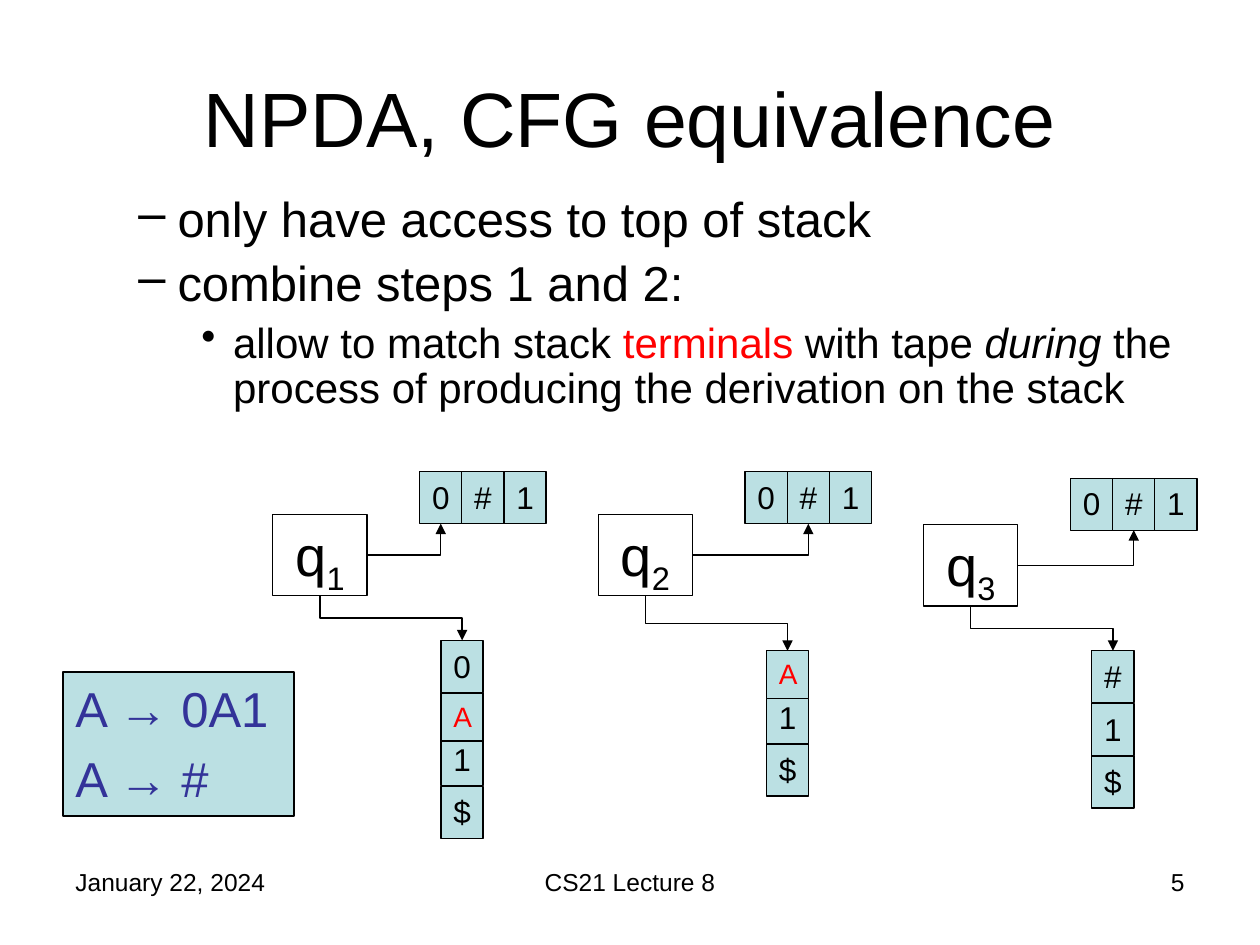
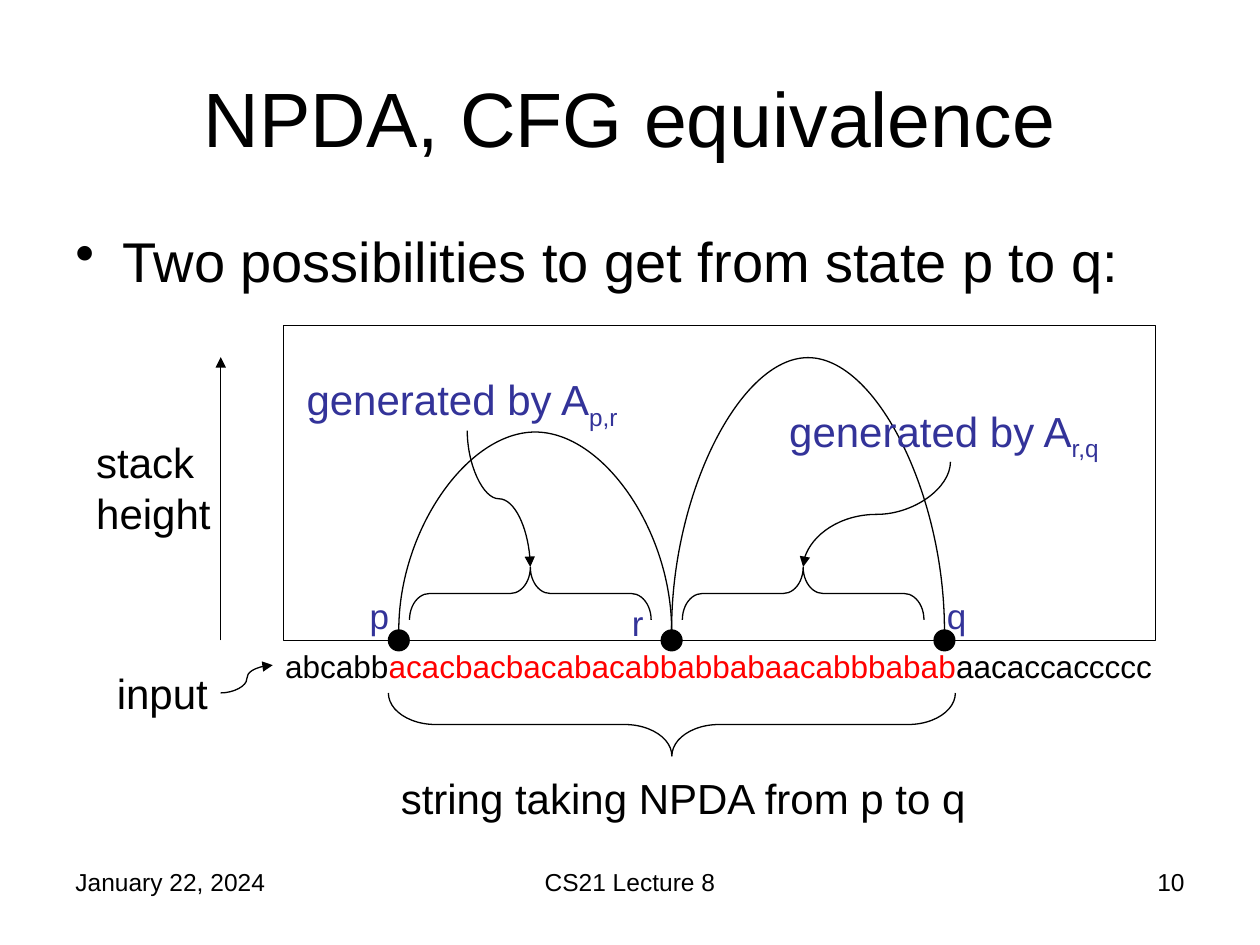
"""Build two lecture slides on the equivalence of NPDAs and CFGs."""
from itertools import accumulate

from lxml.etree import SubElement
from pptx import Presentation
from pptx.dml.color import RGBColor
from pptx.enum.shapes import MSO_CONNECTOR, MSO_SHAPE
from pptx.enum.text import MSO_ANCHOR, PP_ALIGN
from pptx.oxml.ns import qn
from pptx.util import Cm, Pt

BLACK = "000000"
RED = "FF0000"
INDIGO = "333399"
PALE_TEAL = "BBE0E3"
FONT = "Arial"
LINE_WIDTH = Pt(0.75)
colour = RGBColor.from_string


def add_box(slide, box, paragraphs=(), size=18, ink=BLACK, align=PP_ALIGN.LEFT,
            preset=None, fill=None, anchor=MSO_ANCHOR.TOP, space_before=0):
    """Add a text box, or an outlined preset shape; each paragraph is a list of (text, style) runs."""
    lengths = [Cm(value) for value in box]
    if preset is None:
        shape = slide.shapes.add_textbox(*lengths)
    else:
        shape = slide.shapes.add_shape(preset, *lengths)
        shape.shadow.inherit = False
        shape.line.color.rgb = colour(BLACK)
        shape.line.width = LINE_WIDTH
        if fill:
            shape.fill.solid()
            shape.fill.fore_color.rgb = colour(fill)
        else:
            shape.fill.background()
    frame = shape.text_frame
    frame.word_wrap = True
    frame.vertical_anchor = anchor
    for index, runs in enumerate(paragraphs):
        paragraph = frame.add_paragraph() if index else frame.paragraphs[0]
        paragraph.alignment = align
        paragraph.font.name = FONT
        paragraph.font.size = Pt(size)
        paragraph.font.color.rgb = colour(ink)
        if index:
            paragraph.space_before = Pt(space_before)
        for text, style in runs:
            run = paragraph.add_run()
            run.text = text
            if style == "italic":
                run.font.italic = True
            elif style == "subscript":
                run._r.get_or_add_rPr().set("baseline", "-25000")
            elif style:
                run.font.color.rgb = colour(style)
    return shape


def add_link(slide, kind, start, end, arrow=True, vertical=False, preset=None, bend=None):
    """Add a connector; a vertical one leaves its start upwards or downwards."""
    (x1, y1), (x2, y2) = start, end
    if vertical:
        middle_x, middle_y = (x1 + x2) / 2, (y1 + y2) / 2
        half_width, half_height = (y2 - y1) / 2, (x1 - x2) / 2
        x1, x2 = middle_x - half_width, middle_x + half_width
        y1, y2 = middle_y - half_height, middle_y + half_height
    connector = slide.shapes.add_connector(kind, Cm(x1), Cm(y1), Cm(x2), Cm(y2))
    connector.line.color.rgb = colour(BLACK)
    connector.line.width = LINE_WIDTH
    properties = connector.element.spPr
    geometry = properties.find(qn("a:prstGeom"))
    if vertical:
        properties.find(qn("a:xfrm")).set("rot", "5400000")
    if preset:
        geometry.set("prst", preset)
    if bend is not None:
        guides = geometry.find(qn("a:avLst"))
        if guides is None:
            guides = SubElement(geometry, qn("a:avLst"))
        SubElement(guides, qn("a:gd"), name="adj1", fmla=f"val {round(bend * 100000)}")
    if arrow:
        SubElement(properties.find(qn("a:ln")), qn("a:tailEnd"), type="triangle")
    SubElement(properties, qn("a:effectLst"))


presentation = Presentation()
presentation.slide_width = Cm(25.4)
presentation.slide_height = Cm(19.05)

slides = []
for number in ("5", "10"):
    slide = presentation.slides.add_slide(presentation.slide_layouts[6])
    slides.append(slide)
    for text, left, width, align in (
        ("January 22, 2024", 1.27, 5.93, PP_ALIGN.LEFT),
        ("CS21 Lecture 8", 8.68, 8.04, PP_ALIGN.CENTER),
        (number, 18.2, 5.93, PP_ALIGN.RIGHT),
    ):
        add_box(slide, (left, 17.36, width, 1.32), [[(text, None)]], 14, align=align)
    add_box(slide, (1.27, 0.76, 22.86, 3.18), [[("NPDA, CFG equivalence", None)]], 44,
            align=PP_ALIGN.CENTER, anchor=MSO_ANCHOR.MIDDLE)
machine_slide, path_slide = slides

stack_body = add_box(machine_slide, (1.27, 3.81, 22.86, 4.88), [
    [("only have access to top of stack", None)],
    [("combine steps 1 and 2:", None)],
    [("allow to match stack ", None), ("terminals", RED), (" with tape ", None),
     ("during", "italic"),
     (" the process of producing the derivation on the stack", None)],
], 28, space_before=6.4)
stack_body.text_frame.paragraphs[2].font.size = Pt(24)
stack_body.text_frame.paragraphs[2].space_before = Pt(5.5)
path_body = add_box(path_slide, (1.27, 4.45, 22.86, 1.9),
                    [[("Two possibilities to get from state p to q:", None)]], 32)

bulleted = [*stack_body.text_frame.paragraphs, *path_body.text_frame.paragraphs]
bullets = [("–", 2.06, 0.79, 0.9), ("–", 2.06, 0.79, 0.9), ("•", 3.18, 0.64, 0.9),
           ("•", 0.95, 0.95, 1.0)]
for paragraph, (character, left, hanging, line_spacing) in zip(bulleted, bullets):
    properties = paragraph._p.get_or_add_pPr()
    properties.set("marL", str(Cm(left)))
    properties.set("indent", str(-Cm(hanging)))
    bullet = SubElement(properties, qn("a:buChar"), char=character)
    properties.insert(0, bullet)
    paragraph.line_spacing = line_spacing

CELL_WIDTH, CELL_HEIGHT = 0.85, 1.05
STATE_WIDTH, STATE_HEIGHT = 1.9, 1.64
machines = [
    ("1", 10.37, 9.51, 0, 12.91, "0A1$"),
    ("2", 10.37, 9.51, 1, 13.12, "A1$"),
    ("3", 10.58, 9.64, 1, 13.12, "#1$"),
]
for column, (state, state_top, tape_top, head, stack_top, stack) in enumerate(machines):
    state_left = 5.5 + 6.56 * column
    tape_left = state_left + 2.96
    stack_left = state_left + 3.39
    cells = [(symbol, tape_left + CELL_WIDTH * index, tape_top)
             for index, symbol in enumerate("0#1")]
    steps = [0.82 if symbol == "A" else 1.06 for symbol in stack]
    stack_tops = accumulate(steps, initial=stack_top)
    cells += reversed([(symbol, stack_left, top) for symbol, top in zip(stack, stack_tops)])
    for symbol, left, top in cells:
        variable = symbol == "A"
        add_box(machine_slide, (left, top, CELL_WIDTH, 0.97 if variable else CELL_HEIGHT),
                [[(symbol, None)]], 16 if variable else 18, RED if variable else BLACK,
                PP_ALIGN.CENTER, MSO_SHAPE.RECTANGLE, PALE_TEAL)
    add_box(machine_slide, (state_left, state_top, STATE_WIDTH, STATE_HEIGHT),
            [[("q", None), (state, "subscript")]], 32, align=PP_ALIGN.CENTER,
            preset=MSO_SHAPE.RECTANGLE)
    add_link(machine_slide, MSO_CONNECTOR.ELBOW,
             (state_left + STATE_WIDTH, state_top + STATE_HEIGHT / 2),
             (tape_left + CELL_WIDTH * (head + 0.5), tape_top + CELL_HEIGHT),
             preset="bentConnector2")
    add_link(machine_slide, MSO_CONNECTOR.ELBOW,
             (state_left + STATE_WIDTH / 2, state_top + STATE_HEIGHT),
             (stack_left + CELL_WIDTH / 2, stack_top), vertical=True)

add_box(machine_slide, (1.27, 13.55, 4.66, 2.9), [[("A → 0A1", None)], [("A → #", None)]],
        28, INDIGO, preset=MSO_SHAPE.RECTANGLE, fill=PALE_TEAL, space_before=6.4)

add_box(path_slide, (5.72, 6.56, 17.57, 6.35), preset=MSO_SHAPE.RECTANGLE)
add_link(path_slide, MSO_CONNECTOR.STRAIGHT, (4.45, 12.91), (4.45, 7.2))
add_box(path_slide, (1.69, 8.68, 3.39, 2.29), [[("stack height", None)]], 24)
add_box(path_slide, (5.5, 12.91, 18.42, 1.02), [[
    ("abcabb", None), ("acacbacbacabacabbabbabaacabbbabab", RED), ("aacaccaccccc", None)]])
add_box(path_slide, (1.9, 13.34, 2.54, 1.27), [[("input", None)]], 24, align=PP_ALIGN.RIGHT)
add_link(path_slide, MSO_CONNECTOR.CURVE, (4.45, 13.97), (5.5, 13.41))
add_box(path_slide, (7.83, 15.45, 12.28, 1.27),
        [[("string taking NPDA from p to q", None)]], 24)

STATE_STEP = 5.5
DOT_SIZE = 0.42
for index in range(3):
    add_box(path_slide, (7.83 + STATE_STEP * index, 12.7, DOT_SIZE, DOT_SIZE),
            preset=MSO_SHAPE.OVAL, fill=BLACK)

END_DROP = 0.01
for index, arch_height in enumerate((3.99, 5.49)):
    left = 8.04 + STATE_STEP * index
    add_link(path_slide, MSO_CONNECTOR.CURVE, (left, 12.7),
             (left + STATE_STEP, 12.7 + END_DROP), arrow=False, vertical=True,
             bend=-arch_height / END_DROP)

for name, left, top in (("p", 7.2, 11.85), ("q", 18.84, 11.85), ("r", 12.49, 12.01)):
    add_box(path_slide, (left, top, 1.07, 1.09), [[(name, None)]], 20, INDIGO)

for box, rotation, curl in (
    ((12.91, 8.89, 1.27, 11.43), 270, 0.75),
    ((10.16, 9.53, 1.06, 4.87), 90, 0.38),
    ((15.66, 9.53, 1.06, 4.87), 90, 0.38),
):
    brace = add_box(path_slide, box, preset=MSO_SHAPE.LEFT_BRACE)
    brace.rotation = rotation
    brace.adjustments[0] = curl

for states, left, top, start, end in (
    ("p,r", 5.93, 7.41, (9.42, 8.68), (10.69, 11.43)),
    ("r,q", 15.66, 8.04, (19.16, 9.31), (16.19, 11.43)),
):
    add_box(path_slide, (left, top, 6.98, 1.27),
            [[("generated by A", None), (states, "subscript")]], 24, INDIGO)
    add_link(path_slide, MSO_CONNECTOR.CURVE, start, end, vertical=True)

presentation.save("out.pptx")
